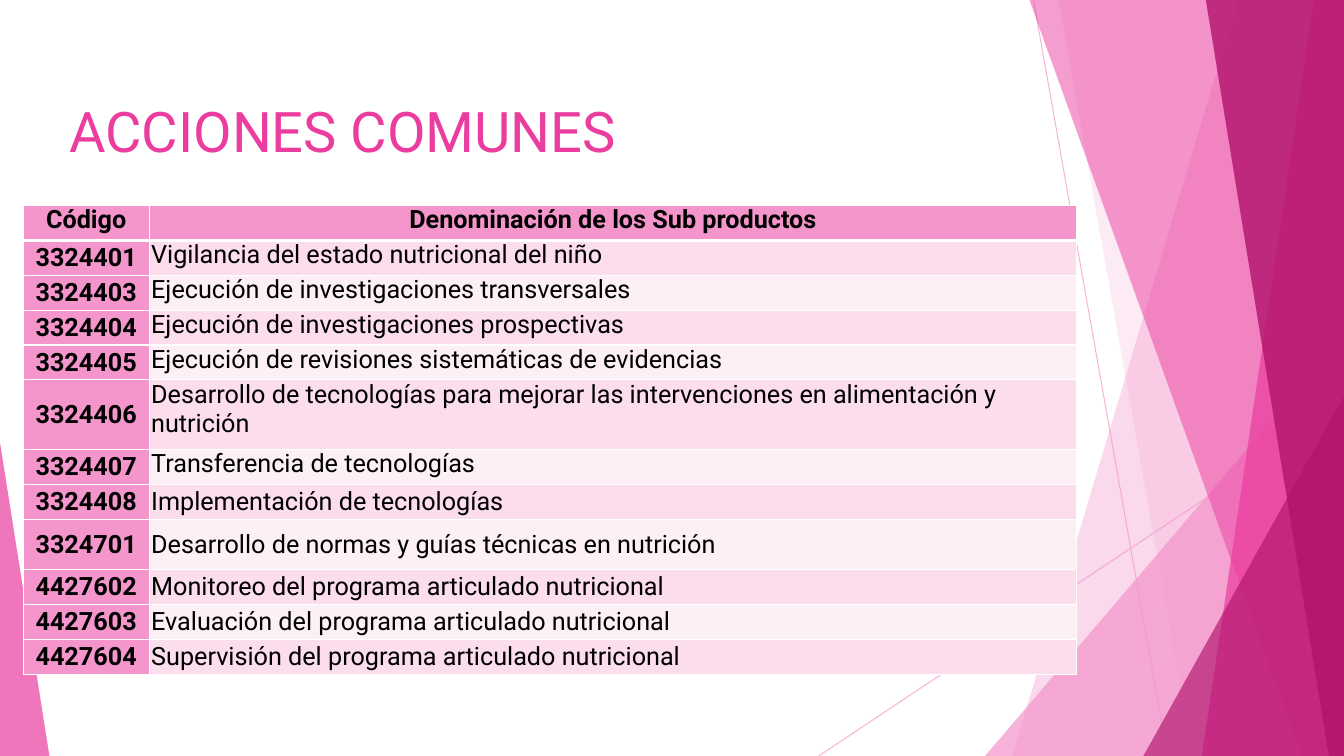
import pptx
import pptx.util
import pptx.dml.color
import pptx.enum.shapes
import pptx.enum.text
import pptx.oxml.ns
import pptx.oxml.xmlchemy

TITLE = "ACCIONES COMUNES"
HEADINGS = ("Código", "Denominación de los Sub productos")
SUBPRODUCTS = [
    ("3324401", "Vigilancia del estado nutricional del niño"),
    ("3324403", "Ejecución de investigaciones transversales"),
    ("3324404", "Ejecución de investigaciones prospectivas"),
    ("3324405", "Ejecución de revisiones sistemáticas de evidencias"),
    ("3324406", "Desarrollo de tecnologías para mejorar las intervenciones en alimentación y nutrición"),
    ("3324407", "Transferencia de tecnologías"),
    ("3324408", "Implementación de tecnologías"),
    ("3324701", "Desarrollo de normas y guías técnicas en nutrición"),
    ("4427602", "Monitoreo del programa articulado nutricional"),
    ("4427603", "Evaluación del programa articulado nutricional"),
    ("4427604", "Supervisión del programa articulado nutricional"),
]
COLOURS = {"light": "F496CB", "pink": "EB3D9F", "deep": "B2136D", "odd row": "FBDDEC",
           "even row": "FDEFF6", "text": "000000", "border": "FFFFFF"}
FONT = "Roboto"
WIDTH, HEIGHT = 13.33, 7.5

RAYS = [(10.25, 0, 11.58, HEIGHT), (WIDTH, 4.03, 8.12, HEIGHT)]
FACETS = [
    ("band", 12.28, 10.04, "light", 36),
    ("band", 10.5, 11.83, "light", 20),
    ("corner", 9.77, 3.33, 3.56, 1, "light", 72),
    ("band", 10.21, 12.91, "pink", 50),
    ("band", 13.03, 11.92, "pink", 70),
    ("band", 11.96, 13.18, "deep", 80),
    ("corner", 11.34, 3.93, 1.99, 1, "deep", 66),
    ("corner", 0, 4.39, 0.49, 0, "pink", 70),
]

TABLE_LEFT, TABLE_TOP, TABLE_HEIGHT = 0.23, 2.04, 4.65
COLUMNS = (1.25, 9.2)
TALL_ROW = 0.5
TALL_CODE, TWO_LINE_CODE = "3324701", "3324406"
TOP_ALIGNED_ROWS = 7

inch = pptx.util.Inches
MIDDLE = pptx.enum.text.MSO_ANCHOR.MIDDLE
TOP = pptx.enum.text.MSO_ANCHOR.TOP
CENTER = pptx.enum.text.PP_ALIGN.CENTER
LEFT = pptx.enum.text.PP_ALIGN.LEFT


def rgb(colour):
    return pptx.dml.color.RGBColor.from_string(COLOURS[colour])


def add_child(parent, tag, **attributes):
    child = pptx.oxml.xmlchemy.OxmlElement(tag)
    for key, value in attributes.items():
        child.set(key, str(value))
    parent.append(child)
    return child


def set_alpha(properties, percent):
    colour = next(properties.iter(pptx.oxml.ns.qn("a:srgbClr")))
    add_child(colour, "a:alpha", val=percent * 1000)


def write(paragraph, words, size, colour, bold=False, align=LEFT):
    paragraph.alignment = align
    run = paragraph.add_run()
    run.text = words
    run.font.name, run.font.size, run.font.bold = FONT, pptx.util.Pt(size), bold
    run.font.color.rgb = rgb(colour)


def add_ray(slide, x1, y1, x2, y2):
    ray = slide.shapes.add_connector(pptx.enum.shapes.MSO_CONNECTOR.STRAIGHT,
                                     inch(x1), inch(y1), inch(x2), inch(y2))
    ray.line.color.rgb = rgb("light")
    ray.line.width = pptx.util.Pt(0.75)
    properties = ray.element.spPr
    set_alpha(properties, 70)
    add_child(properties, "a:effectLst")


def add_facet(slide, kind, *geometry, colour, opacity):
    if kind == "band":
        top_x, bottom_x = geometry
        outline = slide.shapes.build_freeform(inch(top_x), 0)
        corners = [(WIDTH, 0), (WIDTH, HEIGHT), (bottom_x, HEIGHT)]
        outline.add_line_segments([(inch(x), inch(y)) for x, y in corners], close=True)
        facet = outline.convert_to_shape()
    else:
        left, top, width, apex = geometry
        facet = slide.shapes.add_shape(pptx.enum.shapes.MSO_SHAPE.ISOSCELES_TRIANGLE,
                                       inch(left), inch(top), inch(width), inch(HEIGHT - top))
        facet.adjustments[0] = apex
    facet.shadow.inherit = False
    facet.fill.solid()
    facet.fill.fore_color.rgb = rgb(colour)
    set_alpha(facet.element.spPr, opacity)
    facet.line.fill.background()


def add_borders(cell, top, bottom):
    properties = cell._tc.get_or_add_tcPr()
    for side, points in (("L", 1), ("R", 1), ("T", top), ("B", bottom)):
        edge = add_child(properties, "a:ln" + side, w=int(pptx.util.Pt(points)))
        add_child(add_child(edge, "a:solidFill"), "a:srgbClr", val=COLOURS["border"])


def add_subproduct_table(slide):
    rows = [HEADINGS] + SUBPRODUCTS
    line_height = (TABLE_HEIGHT - TALL_ROW) / len(rows)
    heights = {TALL_CODE: TALL_ROW, TWO_LINE_CODE: 2 * line_height}
    table = slide.shapes.add_table(len(rows), len(COLUMNS), inch(TABLE_LEFT), inch(TABLE_TOP),
                                   inch(sum(COLUMNS)), inch(TABLE_HEIGHT)).table
    for column, width in zip(table.columns, COLUMNS):
        column.width = inch(width)
    for r, row in enumerate(rows):
        table.rows[r].height = inch(heights.get(row[0], line_height))
        for c, words in enumerate(row):
            heading = r == 0
            emphasised = heading or c == 0
            cell = table.cell(r, c)
            cell.margin_left = cell.margin_right = inch(0.02)
            cell.margin_top = cell.margin_bottom = 0
            top_aligned = heading or (c == 1 and r < TOP_ALIGNED_ROWS)
            cell.vertical_anchor = TOP if top_aligned else MIDDLE
            add_borders(cell, 3 if r == 1 else 1, 3 if heading else 1)
            cell.fill.solid()
            stripe = "odd row" if r % 2 else "even row"
            cell.fill.fore_color.rgb = rgb("light" if emphasised else stripe)
            write(cell.text_frame.paragraphs[0], words, 18, "text", emphasised,
                  CENTER if emphasised else LEFT)


def main():
    deck = pptx.Presentation()
    deck.slide_width, deck.slide_height = inch(WIDTH), inch(HEIGHT)
    slide = deck.slides.add_slide(deck.slide_layouts[6])
    for ray in RAYS:
        add_ray(slide, *ray)
    for *geometry, colour, opacity in FACETS:
        add_facet(slide, *geometry, colour=colour, opacity=opacity)
    title = slide.shapes.add_textbox(inch(0.59), inch(0.55), inch(9.4), inch(1.12)).text_frame
    title.word_wrap = True
    title.vertical_anchor = pptx.enum.text.MSO_ANCHOR.BOTTOM
    write(title.paragraphs[0], TITLE, 40, "pink")
    add_subproduct_table(slide)
    deck.save("out.pptx")


if __name__ == "__main__":
    main()
